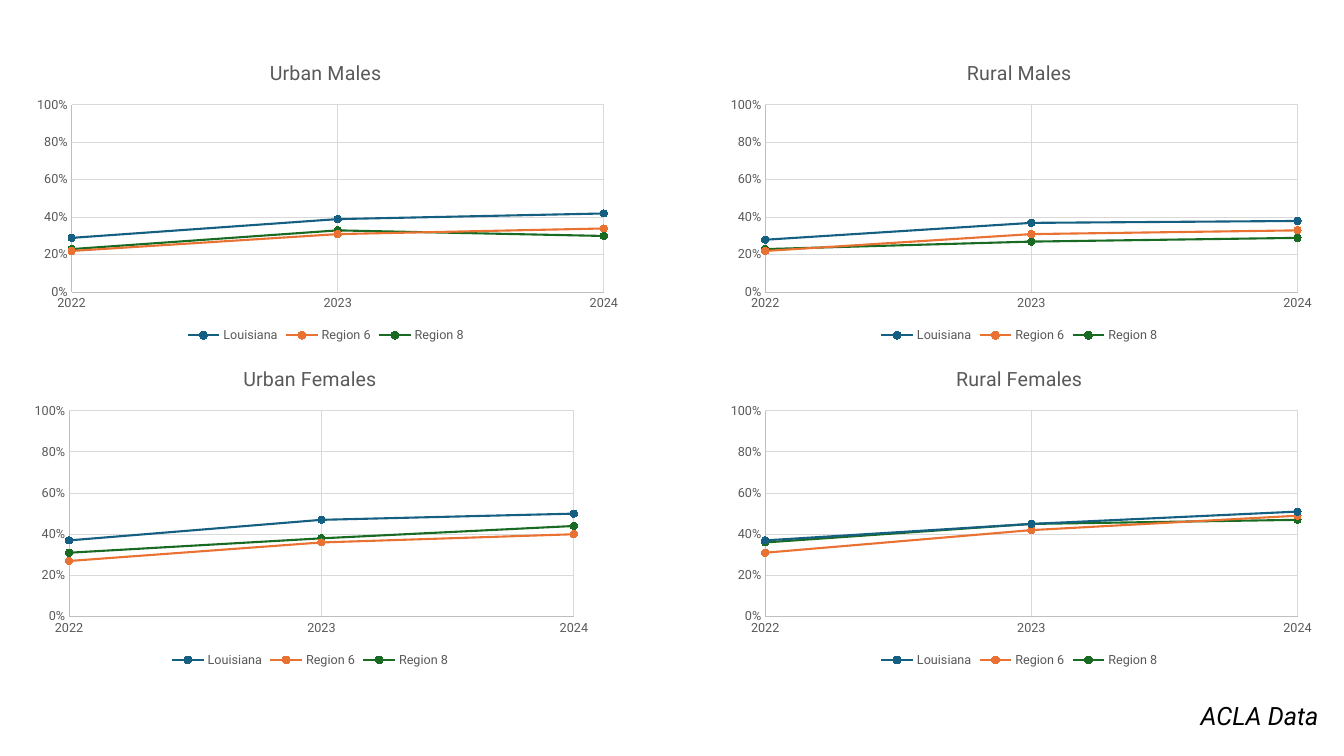
from dataclasses import dataclass

import lxml.etree
import pptx
import pptx.chart.axis
import pptx.chart.chart
import pptx.chart.data
import pptx.dml.color
import pptx.enum.chart
import pptx.oxml.ns
import pptx.slide
import pptx.text.text
import pptx.util
from pptx.util import Inches, Pt

FONT = "Roboto"
GRAY, AXIS_LINE, GRID_LINE = "595959", "BFBFBF", "D9D9D9"
YEARS = (2022, 2023, 2024)
REGION_COLORS = {"Louisiana": "156082", "Region 6": "E97132", "Region 8": "196B24"}


@dataclass
class Panel:
    title: str
    left: float
    top: float
    width: float
    height: float
    plot_top: float
    plot_height: float
    rates: tuple[tuple[float, ...], ...]  # one row per region


UPPER = {"top": 0.44, "height": 3, "plot_top": 0.2, "plot_height": 0.62}
LOWER = {"top": 3.47, "height": 3.19, "plot_top": 0.19, "plot_height": 0.64}
PANELS = [
    Panel("Urban Males", left=0.23, width=6, **UPPER,
          rates=((0.29, 0.39, 0.42), (0.22, 0.31, 0.34), (0.23, 0.33, 0.3))),
    Panel("Rural Males", left=7.11, width=6, **UPPER,
          rates=((0.28, 0.37, 0.38), (0.22, 0.31, 0.33), (0.23, 0.27, 0.29))),
    Panel("Urban Females", left=0.23, width=5.69, **LOWER,
          rates=((0.37, 0.47, 0.5), (0.27, 0.36, 0.4), (0.31, 0.38, 0.44))),
    Panel("Rural Females", left=7.11, width=6, **LOWER,
          rates=((0.37, 0.45, 0.51), (0.31, 0.42, 0.49), (0.36, 0.45, 0.47))),
]


def rgb(color: str) -> pptx.dml.color.RGBColor:
    return pptx.dml.color.RGBColor.from_string(color)


def style_font(font: pptx.text.text.Font, size: float, color: str) -> None:
    font.name = FONT
    font.size = Pt(size)
    font.bold = False
    font.color.rgb = rgb(color)


def style_axis(axis: pptx.chart.axis.ValueAxis, low: float, high: float,
               step: float, number_format: str) -> None:
    axis.minimum_scale, axis.maximum_scale, axis.major_unit = low, high, step
    axis.major_tick_mark = axis.minor_tick_mark = pptx.enum.chart.XL_TICK_MARK.NONE
    axis.tick_labels.number_format = number_format
    axis.tick_labels.number_format_is_linked = False
    style_font(axis.tick_labels.font, 9, GRAY)
    axis.has_major_gridlines = True
    for line, color in ((axis.format.line, AXIS_LINE),
                        (axis.major_gridlines.format.line, GRID_LINE)):
        line.color.rgb = rgb(color)
        line.width = Pt(0.75)


def place_plot(chart: pptx.chart.chart.Chart, panel: Panel) -> None:
    """Fix the inner plot area as fractions of the chart frame."""
    qn = pptx.oxml.ns.qn
    plot_area = chart.element.find(".//" + qn("c:plotArea"))
    for automatic in plot_area.findall(qn("c:layout")):
        plot_area.remove(automatic)
    layout = lxml.etree.Element(qn("c:layout"))
    plot_area.insert(0, layout)
    manual = lxml.etree.SubElement(layout, qn("c:manualLayout"))
    settings = {"layoutTarget": "inner", "xMode": "edge", "yMode": "edge",
                "x": 0.08, "y": panel.plot_top, "w": 0.88, "h": panel.plot_height}
    for tag, value in settings.items():
        lxml.etree.SubElement(manual, qn(f"c:{tag}")).set("val", str(value))


def add_panel(slide: pptx.slide.Slide, panel: Panel) -> None:
    data = pptx.chart.data.XyChartData()
    for region, rates in zip(REGION_COLORS, panel.rates):
        points = data.add_series(region)
        for year, rate in zip(YEARS, rates):
            points.add_data_point(year, rate)
    chart = slide.shapes.add_chart(
        pptx.enum.chart.XL_CHART_TYPE.XY_SCATTER_LINES,
        Inches(panel.left), Inches(panel.top),
        Inches(panel.width), Inches(panel.height), data).chart
    style_font(chart.font, 10, "000000")
    chart.plots[0].vary_by_categories = False

    # Title and legend
    chart.has_title = True
    title = chart.chart_title.text_frame.paragraphs[0].add_run()
    title.text = panel.title
    style_font(title.font, 14, GRAY)
    chart.chart_title.include_in_layout = False
    chart.has_legend = True
    chart.legend.position = pptx.enum.chart.XL_LEGEND_POSITION.BOTTOM
    chart.legend.include_in_layout = False
    style_font(chart.legend.font, 9, GRAY)

    # Axes and plot area
    style_axis(chart.category_axis, YEARS[0], YEARS[-1], 1, "General")
    style_axis(chart.value_axis, 0, 1, 0.2, "0%")
    place_plot(chart, panel)

    # Region lines
    for region, color in zip(chart.plots[0].series, REGION_COLORS.values()):
        region.format.line.color.rgb = rgb(color)
        region.format.line.width = Pt(1.5)
        region.marker.style = pptx.enum.chart.XL_MARKER_STYLE.CIRCLE
        region.marker.size = 5
        region.marker.format.fill.solid()
        region.marker.format.fill.fore_color.rgb = rgb(color)
        region.marker.format.line.color.rgb = rgb(color)


def add_data_label(slide: pptx.slide.Slide) -> None:
    label = slide.shapes.add_textbox(Inches(11.81), Inches(6.9), Inches(1.63), Inches(0.4))
    label.text_frame.word_wrap = True
    credit = label.text_frame.paragraphs[0].add_run()
    credit.text = "ACLA Data"
    style_font(credit.font, 18, "000000")
    credit.font.italic = True


def main() -> None:
    deck = pptx.Presentation()
    deck.slide_width, deck.slide_height = Inches(13.33), Inches(7.5)
    slide = deck.slides.add_slide(deck.slide_layouts[6])
    for panel in PANELS:
        add_panel(slide, panel)
    add_data_label(slide)
    deck.save("out.pptx")


if __name__ == "__main__":
    main()
